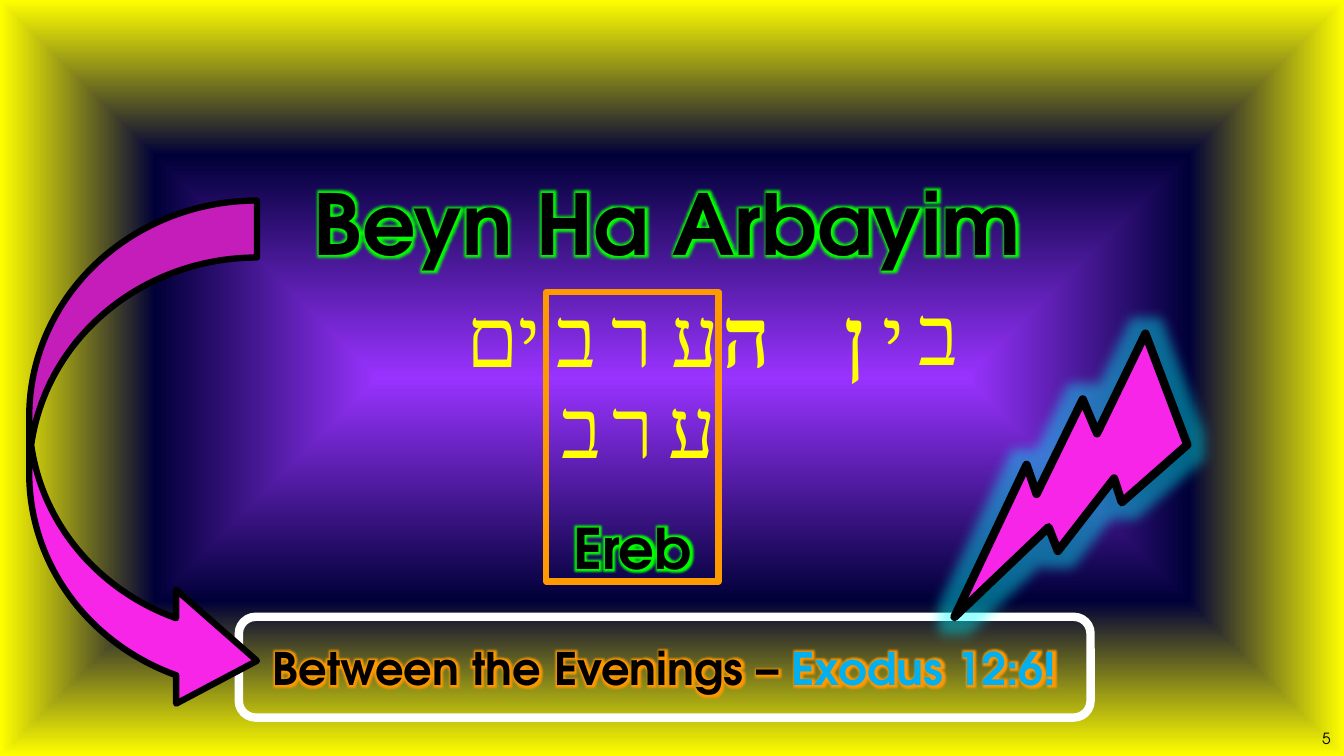
from dataclasses import dataclass

from pptx import Presentation
from pptx.dml.color import RGBColor
from pptx.enum.shapes import MSO_SHAPE
from pptx.enum.text import MSO_ANCHOR, MSO_AUTO_SIZE, PP_ALIGN
from pptx.oxml import parse_xml
from pptx.oxml.ns import nsdecls, qn
from pptx.util import Pt


@dataclass(frozen=True)
class Theme:
    """Colours, fonts and type sizes of the slide."""
    violet: str = "9933FF"
    navy: str = "000038"
    yellow: str = "FFFF00"
    black: str = "000000"
    white: str = "FFFFFF"
    green: str = "00FF00"
    orange: str = "FF9900"
    pink: str = "F725E8"
    blue: str = "00B0F0"
    cyan: str = "00FFFF"
    latin: str = "TeX Gyre Adventor"
    hebrew: str = "Times New Roman"
    title: int = 60
    word: int = 40
    label: int = 32
    number: int = 11


THEME = Theme()
LETTER_WIDTHS = {"ב": 41.8, "י": 31, "ן": 34.6, "ה": 45.4, "ע": 41.8, "ר": 43.2, "ם": 45.4}
BOLD_LETTERS = "ןה"
PHRASE = [("ב", 648.7, 197.3), ("י", 623.5, 198.7), ("ן", 596.2, 198.7),
          ("ה", 509, 198.7), ("ע", 472.3, 198.7), ("ר", 429.8, 198.7),
          ("ב", 390.2, 198.7), ("י", 363.6, 198.7), ("ם", 326.2, 198.7)]
ROOT_WORD = [("ע", 470.2, 264.2), ("ר", 430.6, 264.2), ("ב", 393.8, 264.2)]


def set_background(slide, stops):
    """Fill the slide with a gradient that runs from its centre to its edges."""
    stop_xml = "".join(f'<a:gs pos="{percent * 1000}"><a:srgbClr val="{color}"/></a:gs>'
                       for percent, color in stops)
    background = parse_xml(
        f'<p:bg {nsdecls("p", "a")}><p:bgPr><a:gradFill><a:gsLst>{stop_xml}</a:gsLst>'
        '<a:path path="shape"><a:fillToRect l="50000" t="50000" r="50000" b="50000"/></a:path>'
        '</a:gradFill><a:effectLst/></p:bgPr></p:bg>')
    slide.element.cSld.insert(0, background)


def glow_effect(color, radius, alpha=100):
    """Return an effect list with one glow."""
    return parse_xml(
        f'<a:effectLst {nsdecls("a")}><a:glow rad="{Pt(radius)}"><a:srgbClr val="{color}">'
        f'<a:alpha val="{alpha * 1000}"/></a:srgbClr></a:glow></a:effectLst>')


def add_run(paragraph, text, size, color, font=THEME.latin, bold=False, glow=None):
    """Add one styled run and return it."""
    run = paragraph.add_run()
    run.text = text
    run.font.size = Pt(size)
    run.font.bold = bold
    run.font.name = font
    run.font.color.rgb = RGBColor.from_string(color)
    if glow:
        properties = run.font._element
        properties.find(qn("a:solidFill")).addnext(glow_effect(glow, 8))
    return run


def add_text_box(slide, left, top, width, height, align=PP_ALIGN.CENTER,
                 anchor=MSO_ANCHOR.TOP, wrap=True):
    """Add a text box and return its first paragraph."""
    frame = slide.shapes.add_textbox(Pt(left), Pt(top), Pt(width), Pt(height)).text_frame
    frame.word_wrap = wrap
    frame.vertical_anchor = anchor
    paragraph = frame.paragraphs[0]
    paragraph.alignment = align
    return paragraph


def add_letter(slide, letter, left, top):
    """Add one Hebrew letter in its own box."""
    box = slide.shapes.add_textbox(Pt(left), Pt(top), Pt(LETTER_WIDTHS[letter]), Pt(79.9))
    box.text_frame.word_wrap = False
    box.text_frame.auto_size = MSO_AUTO_SIZE.SHAPE_TO_FIT_TEXT
    run = add_run(box.text_frame.paragraphs[0], letter, THEME.title, THEME.yellow,
                  THEME.hebrew, letter in BOLD_LETTERS)
    run.font._element.find(qn("a:latin")).addnext(
        parse_xml(f'<a:cs {nsdecls("a")} typeface="{THEME.hebrew}"/>'))


def add_outlined_shape(slide, kind, left, top, width, height, line, weight, fill=None):
    """Add a preset shape with a line and an optional fill."""
    shape = slide.shapes.add_shape(kind, Pt(left), Pt(top), Pt(width), Pt(height))
    shape.shadow.inherit = False
    shape.line.color.rgb = RGBColor.from_string(line)
    shape.line.width = Pt(weight)
    if fill:
        shape.fill.solid()
        shape.fill.fore_color.rgb = RGBColor.from_string(fill)
    else:
        shape.fill.background()
    return shape


def add_label(slide):
    """Add the rounded frame with the translation and its verse."""
    frame = add_outlined_shape(slide, MSO_SHAPE.ROUNDED_RECTANGLE, 170.6, 440.6, 608.4, 72,
                               THEME.white, 6).text_frame
    frame.word_wrap = True
    frame.vertical_anchor = MSO_ANCHOR.MIDDLE
    paragraph = frame.paragraphs[0]
    paragraph.alignment = PP_ALIGN.CENTER
    for text, color in [("Between the Evenings ", THEME.black), ("– ", THEME.black),
                        ("Exodus 12:6!", THEME.blue)]:
        add_run(paragraph, text, THEME.label, color, bold=True, glow=THEME.orange)


def add_arrow(slide):
    """Add the curved arrow from the title to the label."""
    arrow = add_outlined_shape(slide, MSO_SHAPE.CURVED_RIGHT_ARROW, 20.9, 143.3, 162.7, 369.4,
                               THEME.black, 4.5, THEME.pink)
    for index, value in enumerate([0.25, 0.5, 0.355]):
        arrow.adjustments[index] = value


def add_bolt(slide):
    """Add the glowing lightning bolt."""
    bolt = add_outlined_shape(slide, MSO_SHAPE.LIGHTNING_BOLT, 663.8, 256.3, 202.3, 166.3,
                              THEME.black, 6, THEME.pink)
    bolt.rotation = 90
    properties = bolt.element.spPr
    properties.replace(properties.find(qn("a:effectLst")), glow_effect(THEME.cyan, 18, 40))


def main():
    """Build the slide and save it."""
    presentation = Presentation()
    presentation.slide_width, presentation.slide_height = Pt(960), Pt(540)
    slide = presentation.slides.add_slide(presentation.slide_layouts[6])
    set_background(slide, [(0, THEME.violet), (59, THEME.navy), (100, THEME.yellow)])

    title = add_text_box(slide, 80.6, 118.8, 792, 80)
    add_run(title, "Beyn Ha Arbayim", THEME.title, THEME.black, bold=True, glow=THEME.green)
    word = add_text_box(slide, 390.2, 363, 123.1, 56)
    add_run(word, "Ereb", THEME.word, THEME.black, bold=True, glow=THEME.green)

    for letter, left, top in PHRASE + ROOT_WORD:
        add_letter(slide, letter, left, top)
    add_outlined_shape(slide, MSO_SHAPE.RECTANGLE, 390.2, 208.8, 123.1, 206.6, THEME.orange, 4.5)
    add_label(slide)
    add_arrow(slide)
    add_bolt(slide)

    number = add_text_box(slide, 923, 516.2, 34.6, 21.6, PP_ALIGN.RIGHT, MSO_ANCHOR.BOTTOM)
    add_run(number, "5", THEME.number, THEME.black)
    presentation.save("out.pptx")


if __name__ == "__main__":
    main()
